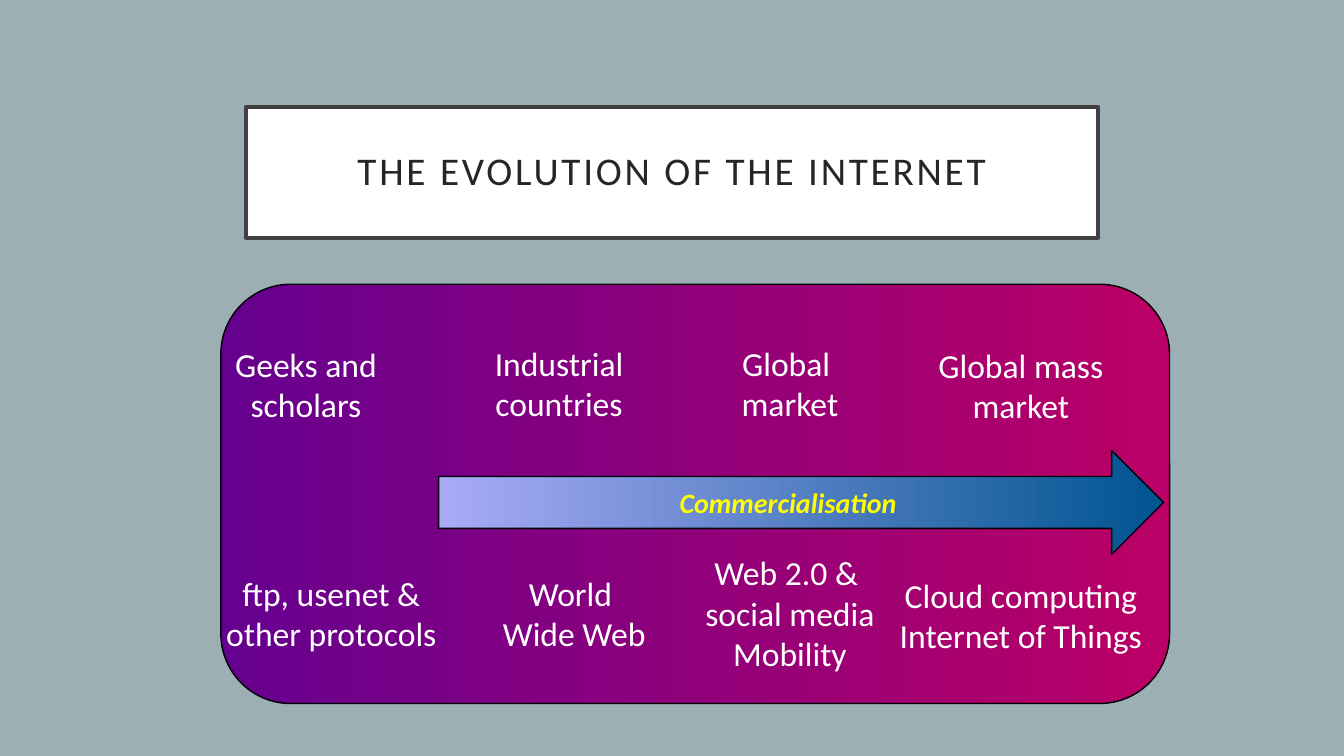
"""Build the slide on the evolution of the internet."""
from pptx import Presentation
from pptx.dml.color import RGBColor
from pptx.enum import shapes, text
from pptx.util import Inches, Pt

TITLE = "THE EVOLUTION OF THE INTERNET"
ARROW_LABEL = "Commercialisation"
STAGES = [
    (["Geeks and scholars"], (2.11, 3.36, 1.85, 1.3)),
    (["Industrial countries"], (4.35, 3.35, 2.39, 0.9)),
    (["Global ", "market"], (6.64, 3.35, 2.39, 1.07)),
    (["Global mass market"], (8.93, 3.37, 2.39, 1.07)),
    (["ftp, usenet & other protocols"], (2.09, 5.63, 2.39, 1.3)),
    (["World ", "Wide Web"], (4.5, 5.63, 2.39, 0.9)),
    (["Web 2.0 & ", "social media", "Mobility"], (6.47, 5.43, 2.73, 1.3)),
    (["Cloud computing", "Internet of Things"], (8.76, 5.65, 2.73, 1.7)),
]
COLORS = {
    "background": "9BAFB5", "white": "FFFFFF", "frame": "404040",
    "title": "262626", "black": "000000", "label": "FFFF00",
    "panel_start": "66008F", "panel_end": "BA0066",
    "arrow_start": "A9ABF7", "arrow_end": "005490",
}


def rgb(name):
    """Return the named colour."""
    return RGBColor.from_string(COLORS[name])


def add_box(s, kind, box, fills, line, width):
    """Add a shape with a solid fill or a left-to-right gradient."""
    sp = s.shapes.add_shape(kind, *map(Inches, box))
    sp.shadow.inherit = False
    if len(fills) == 1:
        sp.fill.solid()
        sp.fill.fore_color.rgb = rgb(fills[0])
    else:
        sp.fill.gradient()
        sp.fill.gradient_angle = 0
        for position, (stop, name) in enumerate(zip(sp.fill.gradient_stops, fills)):
            stop.position = position
            stop.color.rgb = rgb(name)
    sp.line.color.rgb = rgb(line)
    sp.line.width = Pt(width)
    return sp


def write(sp, lines, size, color, bold=False, italic=False):
    """Write centred lines into a shape and return its text frame."""
    tf = sp.text_frame
    tf.word_wrap = True
    tf.text = "\n".join(lines)
    for p in tf.paragraphs:
        p.alignment = text.PP_ALIGN.CENTER
        for r in p.runs:
            r.font.name = "Calibri"
            r.font.size = Pt(size)
            r.font.bold = bold
            r.font.italic = italic
            r.font.color.rgb = rgb(color)
    return tf


def main():
    """Draw the title, the panel, the arrow and the stages."""
    prs = Presentation()
    prs.slide_width, prs.slide_height = Inches(13.33), Inches(7.5)
    s = prs.slides.add_slide(prs.slide_layouts[6])
    s.background.fill.solid()
    s.background.fill.fore_color.rgb = rgb("background")

    kinds = shapes.MSO_SHAPE
    title = add_box(s, kinds.RECTANGLE, (2.44, 1.06, 8.45, 1.3),
                    ["white"], "frame", 2.5)
    tf = write(title, [TITLE], 28, "title")
    tf.vertical_anchor = text.MSO_ANCHOR.MIDDLE
    tf.margin_left = tf.margin_right = Inches(0.2)
    tf.margin_top = tf.margin_bottom = Inches(0.2)
    p = tf.paragraphs[0]
    p.line_spacing = 0.9
    p.runs[0].font._element.set("spc", "200")

    add_box(s, kinds.ROUNDED_RECTANGLE, (2.19, 2.82, 9.41, 4.16),
            ["panel_start", "panel_end"], "black", 1)
    arrow = add_box(s, kinds.RIGHT_ARROW, (4.35, 4.47, 7.19, 1.03),
                    ["arrow_start", "arrow_end"], "black", 1)
    tf = write(arrow, [ARROW_LABEL], 20, "label", bold=True, italic=True)
    tf.vertical_anchor = text.MSO_ANCHOR.MIDDLE

    for lines, box in STAGES:
        write(s.shapes.add_textbox(*map(Inches, box)), lines, 24, "white")

    prs.save("out.pptx")


if __name__ == "__main__":
    main()
